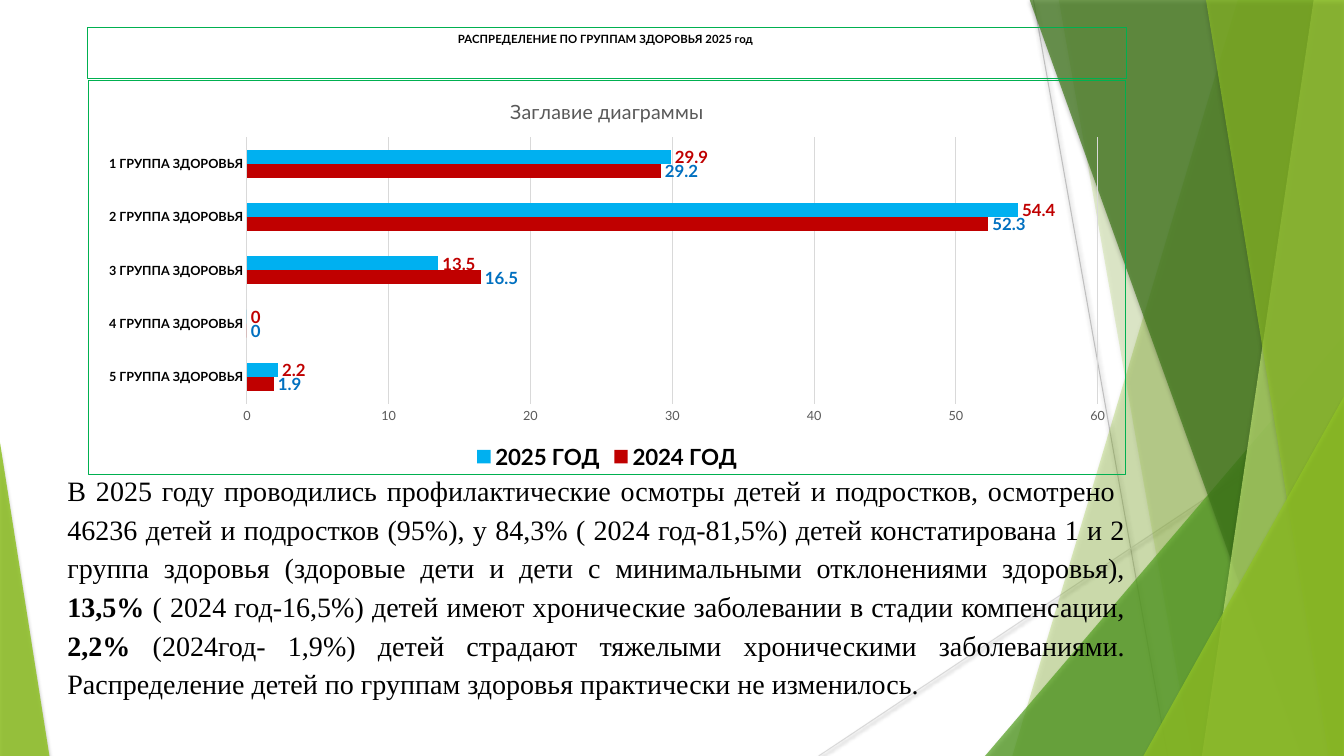
from lxml import etree
from pptx import Presentation
from pptx.chart.data import CategoryChartData
from pptx.dml.color import RGBColor
from pptx.enum.chart import (XL_CHART_TYPE, XL_LABEL_POSITION as LabelPos,
                             XL_LEGEND_POSITION as LegendPos, XL_TICK_MARK as Tick)
from pptx.enum.shapes import MSO_CONNECTOR as Conn, MSO_SHAPE as Kind
from pptx.enum.text import MSO_ANCHOR as Anchor, PP_ALIGN as Align
from pptx.oxml import parse_xml
from pptx.oxml.ns import nsdecls, qn
from pptx.util import Inches, Pt

BLACK = RGBColor(0x00, 0x00, 0x00)
GRAY = RGBColor(0x59, 0x59, 0x59)
PALE = RGBColor(0xD9, 0xD9, 0xD9)
SILVER = RGBColor(0xBF, 0xBF, 0xBF)
LIME = RGBColor(0x90, 0xC2, 0x26)
GREEN = RGBColor(0x54, 0xA0, 0x21)
FOREST = RGBColor(0x3F, 0x78, 0x19)
LIGHT = RGBColor(0xC0, 0xE4, 0x74)
FRAME = RGBColor(0x00, 0xB0, 0x50)
RED = RGBColor(0xC0, 0x00, 0x00)
SKY = RGBColor(0x00, 0xB0, 0xF0)
BLUE = RGBColor(0x00, 0x70, 0xC0)

W, H = 13.33, 7.5
TOP = -0.01
SANS, SERIF = "Lato", "Times New Roman"

HEAD = "РАСПРЕДЕЛЕНИЕ ПО ГРУППАМ ЗДОРОВЬЯ 2025 год "
BODY = [
    ("В 2025 году проводились профилактические осмотры детей и подростков, "
     "осмотрено  46236 детей и подростков (95%), у 84,3% ( 2024 год-81,5%) "
     "детей констатирована 1 и 2 группа здоровья (здоровые дети и дети с "
     "минимальными отклонениями здоровья), ", False),
    ("13,5%", True),
    (" ( 2024 год-16,5%) детей имеют хронические заболевании в стадии "
     "компенсации, ", False),
    ("2,2%", True),
    (" (2024год- 1,9%) детей страдают тяжелыми хроническими заболеваниями. "
     "Распределение детей по группам здоровья практически не изменилось.", False),
]
TITLE = "Заглавие диаграммы"
GROUPS = [f"{n} ГРУППА ЗДОРОВЬЯ" for n in range(5, 0, -1)]
# name, values, bar colour, label colour
SERIES = [
    ("2024 ГОД", (1.9, 0, 16.5, 52.3, 29.2), RED, BLUE),
    ("2025 ГОД", (2.2, 0, 13.5, 54.4, 29.9), SKY, RED),
]
# x1, y1, x2, y2, colour
LINES = [(10.25, 0, 11.58, H, SILVER), (W, 4.03, 8.12, H, PALE)]
# Bands reach the right edge: (top x, bottom x).
# Triangles stand on the bottom edge: (left, top, width, apex).
FACETS = [
    ((12.28, 10.04), LIME, 30),
    ((10.5, 11.82), LIME, 20),
    ((9.77, 3.33, 3.56, 1), GREEN, 72),
    ((10.21, 12.91), FOREST, 70),
    ((13.03, 11.92), LIGHT, 70),
    ((11.96, 13.18), LIME, 65),
    ((11.34, 3.93, 1.99, 1), LIME, 80),
    ((0, 4.39, 0.49, 0), LIME, 85),
]

prs = Presentation()
prs.slide_width, prs.slide_height = Inches(W), Inches(H)
slide = prs.slides.add_slide(prs.slide_layouts[6])
shapes = slide.shapes


def shade(shape, alpha, blur, dist):
    """Give the shape a soft shadow that falls straight down."""
    props = shape._element.spPr
    for old in props.findall(qn("a:effectLst")):
        props.remove(old)
    props.append(parse_xml(
        f'<a:effectLst {nsdecls("a")}><a:outerShdw blurRad="{Pt(blur)}" '
        f'dist="{Pt(dist)}" dir="5400000" rotWithShape="0"><a:srgbClr val="000000">'
        f'<a:alpha val="{alpha * 1000}"/></a:srgbClr></a:outerShdw></a:effectLst>'))


def style(font, size, color=BLACK, bold=False, name=SANS):
    font.size, font.name, font.bold = Pt(size), name, bold
    font.color.rgb = color


def write(shape, runs, size, align, name=SANS, gap=1.0):
    frame = shape.text_frame
    frame.word_wrap, frame.vertical_anchor = True, Anchor.TOP
    para = frame.paragraphs[0]
    para.alignment, para.line_spacing = align, gap
    for text, bold in runs:
        run = para.add_run()
        run.text = text
        style(run.font, size, bold=bold, name=name)


def facet(geo, color, alpha):
    if len(geo) == 2:
        high, low = geo
        pen = shapes.build_freeform(Inches(high), Inches(TOP))
        rest = [(W, TOP), (W, H), (low, H)]
        pen.add_line_segments([(Inches(x), Inches(y)) for x, y in rest])
        shape = pen.convert_to_shape()
    else:
        left, top, wide, apex = geo
        shape = shapes.add_shape(Kind.ISOSCELES_TRIANGLE, Inches(left), Inches(top),
                                 Inches(wide), Inches(H - top))
        shape.adjustments[0] = apex
    shape.fill.solid()
    shape.fill.fore_color.rgb = color
    tint = shape._element.spPr.find(qn("a:solidFill"))[0]
    etree.SubElement(tint, qn("a:alpha")).set("val", str(alpha * 1000))
    shape.line.fill.background()
    shade(shape, 35, 3, 2)


def place(chart):
    """Fix the plot area and frame the whole chart."""
    spots = [("x", 0.153), ("y", 0.145), ("w", 0.82), ("h", 0.676)]
    inner = "".join(f'<c:{key} val="{val}"/>' for key, val in spots)
    plot = chart._chartSpace.chart.plotArea
    for old in plot.findall(qn("c:layout")):
        plot.remove(old)
    plot.insert(0, parse_xml(
        f'<c:layout {nsdecls("c")}><c:manualLayout><c:layoutTarget val="inner"/>'
        f'<c:xMode val="edge"/><c:yMode val="edge"/>{inner}'
        '</c:manualLayout></c:layout>'))
    chart._chartSpace.chart.addnext(parse_xml(
        f'<c:spPr {nsdecls("c", "a")}><a:noFill/><a:ln w="{Pt(0.75)}"><a:solidFill>'
        f'<a:srgbClr val="{FRAME}"/></a:solidFill></a:ln></c:spPr>'))


def graph():
    data = CategoryChartData()
    data.categories = GROUPS
    for name, vals, *_ in SERIES:
        data.add_series(name, vals)
    chart = shapes.add_chart(XL_CHART_TYPE.BAR_CLUSTERED, Inches(0.87), Inches(0.79),
                             Inches(10.3), Inches(3.92), data).chart
    style(chart.font, 10, name="Arial")
    place(chart)
    chart.has_title = True
    chart.chart_title.include_in_layout = False
    title = chart.chart_title.text_frame
    title.text = TITLE
    style(title.paragraphs[0].runs[0].font, 14, GRAY)
    chart.has_legend = True
    chart.legend.position = LegendPos.BOTTOM
    chart.legend.include_in_layout = False
    style(chart.legend.font, 16, bold=True)

    cats, vals = chart.category_axis, chart.value_axis
    for axis in (cats, vals):
        axis.major_tick_mark = axis.minor_tick_mark = Tick.NONE
    style(cats.tick_labels.font, 9, bold=True)
    style(vals.tick_labels.font, 9, GRAY)
    vals.minimum_scale, vals.maximum_scale, vals.major_unit = 0, 60, 10
    vals.format.line.fill.background()
    vals.has_major_gridlines = True
    for line in (cats.format.line, vals.major_gridlines.format.line):
        line.color.rgb, line.width = PALE, Pt(0.75)

    plot = chart.plots[0]
    plot.gap_width, plot.overlap, plot.vary_by_categories = 182, 0, False
    for bars, (_, _, fill, ink) in zip(plot.series, SERIES):
        bars.format.fill.solid()
        bars.format.fill.fore_color.rgb = fill
        bars.invert_if_negative = False
        tags = bars.data_labels
        tags.show_value, tags.position = True, LabelPos.OUTSIDE_END
        style(tags.font, 12, ink, True)


for x1, y1, x2, y2, color in LINES:
    line = shapes.add_connector(Conn.STRAIGHT, Inches(x1), Inches(y1), Inches(x2), Inches(y2))
    line.line.color.rgb, line.line.width = color, Pt(0.75)
    shade(line, 38, 3.1, 1.6)
for item in FACETS:
    facet(*item)

head = shapes.add_shape(Kind.RECTANGLE, Inches(0.87), Inches(0.27), Inches(10.3), Inches(0.51))
head.shadow.inherit = False
head.fill.background()
head.line.color.rgb, head.line.width = FRAME, Pt(0)
write(head, [(HEAD, True)], 8.1, Align.CENTER)

body = shapes.add_textbox(Inches(0.57), Inches(4.6), Inches(10.69), Inches(2.4))
write(body, BODY, 20, Align.JUSTIFY, SERIF, 1.15)
graph()
prs.save("out.pptx")
